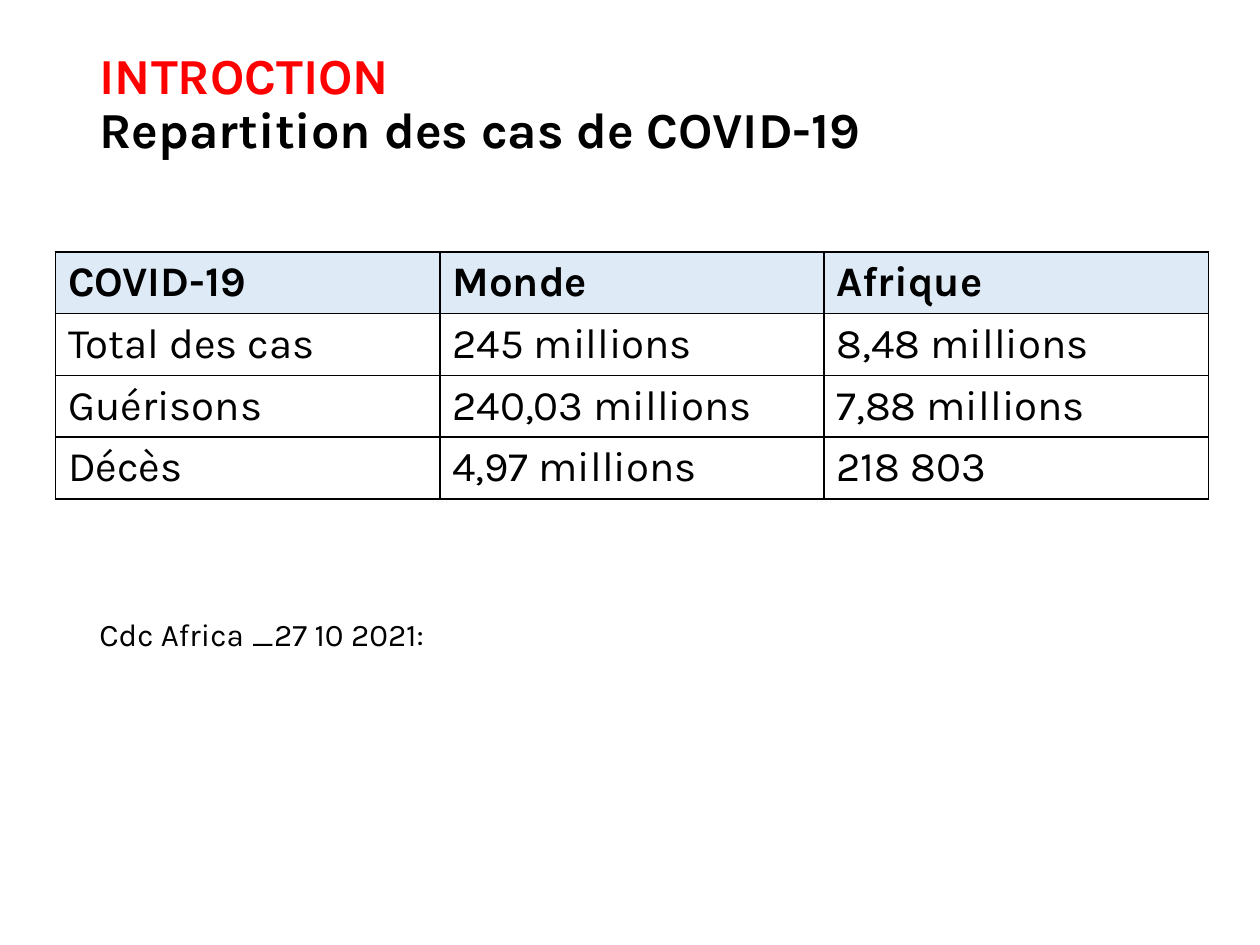
import pptx
import pptx.util
import pptx.dml.color
import pptx.enum.text
import pptx.oxml.ns
from lxml import etree

BLACK = pptx.dml.color.RGBColor(0x00, 0x00, 0x00)
RED = pptx.dml.color.RGBColor(0xFF, 0x00, 0x00)
PALE_BLUE = pptx.dml.color.RGBColor(0xDE, 0xEB, 0xF7)
FONT = "Karla"


def add_span(para, text, size, color=BLACK, bold=False):
    span = para.add_run()
    span.text = text
    span.font.name = FONT
    span.font.size = pptx.util.Pt(size)
    span.font.bold = bold
    span.font.color.rgb = color


def add_borders(cell, color, width):
    properties = cell._tc.get_or_add_tcPr()
    for side in ("lnL", "lnR", "lnT", "lnB"):
        line = etree.SubElement(properties, pptx.oxml.ns.qn(f"a:{side}"),
                                w=str(pptx.util.Pt(width)))
        fill = etree.SubElement(line, pptx.oxml.ns.qn("a:solidFill"))
        etree.SubElement(fill, pptx.oxml.ns.qn("a:srgbClr"), val=str(color))


deck = pptx.Presentation()
deck.slide_width = pptx.util.Inches(10)
deck.slide_height = pptx.util.Inches(7.5)
page = deck.slides.add_slide(deck.slide_layouts[5])

# Shared left edge of the title and the source line
text_left = pptx.util.Inches(0.69)

# Title
title = page.shapes.title
title.left, title.top = text_left, pptx.util.Inches(0.4)
title.width = deck.slide_width - 2 * text_left
title.height = pptx.util.Inches(0.87)
frame = title.text_frame
frame.word_wrap = True
frame.auto_size = pptx.enum.text.MSO_AUTO_SIZE.NONE
frame.vertical_anchor = pptx.enum.text.MSO_ANCHOR.MIDDLE
para = frame.paragraphs[0]
para.alignment = pptx.enum.text.PP_ALIGN.LEFT
para.line_spacing = 0.9
para.space_before = pptx.util.Pt(0)
add_span(para, "INTROCTION", 28.8, RED, bold=True)
para.add_line_break()
add_span(para, "Repartition des cas de COVID-19", 28.8, bold=True)

# Table of cases
rows = [
    ("COVID-19", "Monde", "Afrique"),
    ("Total des cas", "245 millions", "8,48 millions"),
    ("Guérisons", "240,03 millions", "7,88 millions"),
    ("Décès", "4,97 millions", "218 803"),
]
column_width = pptx.util.Inches(3.05)
row_height = pptx.util.Inches(0.49)
table = page.shapes.add_table(
    len(rows), len(rows[0]), pptx.util.Inches(0.44), pptx.util.Inches(2),
    column_width * len(rows[0]), row_height * len(rows)).table
table.first_row = False
table.horz_banding = False
for row, texts in enumerate(rows):
    for column, text in enumerate(texts):
        cell = table.cell(row, column)
        is_header = row == 0
        add_span(cell.text_frame.paragraphs[0], text, 24, bold=is_header)
        add_borders(cell, BLACK, 1)
        if is_header:
            cell.fill.solid()
            cell.fill.fore_color.rgb = PALE_BLUE
        else:
            cell.fill.background()

# Source line
box = page.shapes.add_textbox(text_left, pptx.util.Inches(4.83),
                              pptx.util.Inches(5.4), pptx.util.Inches(0.71))
box.text_frame.word_wrap = True
box.text_frame.auto_size = pptx.enum.text.MSO_AUTO_SIZE.SHAPE_TO_FIT_TEXT
add_span(box.text_frame.paragraphs[0], "Cdc Africa _27 10 2021:", 18)

deck.save("out.pptx")
